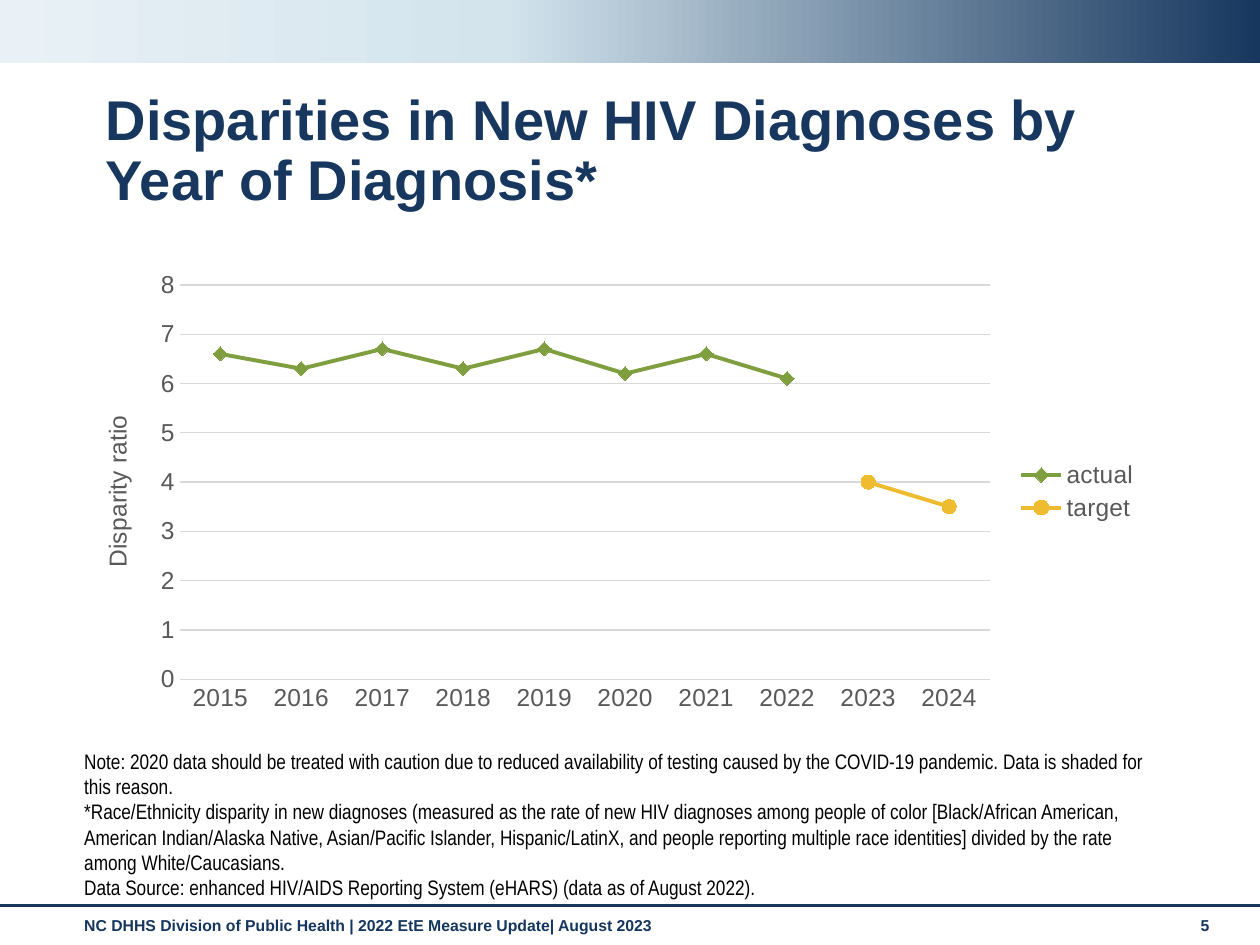
from lxml.etree import SubElement
from pptx import Presentation
from pptx.chart.data import CategoryChartData
from pptx.dml.color import RGBColor
from pptx.enum.chart import XL_CHART_TYPE as ChartType
from pptx.enum.chart import XL_LEGEND_POSITION as LegendPosition
from pptx.enum.chart import XL_MARKER_STYLE as Marker
from pptx.enum.chart import XL_TICK_MARK as TickMark
from pptx.enum.shapes import MSO_CONNECTOR as Connector
from pptx.enum.shapes import MSO_SHAPE as Shape
from pptx.enum.text import MSO_ANCHOR as Anchor
from pptx.oxml import parse_xml
from pptx.oxml.ns import nsdecls, qn
from pptx.util import Inches, Pt

WIDTH, HEIGHT = 10, 7.5
MARGIN, CONTENT_WIDTH = 0.57, 8.74
RULE_TOP, FOOTER_TOP = 7.19, 7.22
NAVY, FOOTER_NAVY, BLACK = "17375E", "15365E", "000000"
GRAY, GRID, GREEN, GOLD = "595959", "D9D9D9", "7F9E3F", "EFBB2F"
BAND_STOPS = [(0, "E9F1F6"), (40, "D3E4ED"), (100, NAVY)]
YEARS = [str(year) for year in range(2015, 2025)]
ACTUAL = [6.6, 6.3, 6.7, 6.3, 6.7, 6.2, 6.6, 6.1]
TARGET = [4, 3.5]
PLOT_SHARES = {"x": 0.1, "y": 0.05, "w": 0.75, "h": 0.86}
NOTES = [
    "Note: 2020 data should be treated with caution due to reduced availability of "
    "testing caused by the COVID-19 pandemic. Data is shaded for this reason.",
    "*Race/Ethnicity disparity in new diagnoses (measured as the rate of new HIV "
    "diagnoses among people of color [Black/African American, American Indian/Alaska "
    "Native, Asian/Pacific Islander, Hispanic/LatinX, and people reporting multiple "
    "race identities] divided by the rate among White/Caucasians.",
    "Data Source: enhanced HIV/AIDS Reporting System (eHARS) (data as of August 2022).",
]


def color(hex_value):
    return RGBColor.from_string(hex_value)


def style_font(font, size, hex_value, bold=False, name="Arial"):
    font.name, font.size, font.bold = name, Pt(size), bold
    font.color.rgb = color(hex_value)


def style_line(line, hex_value, width):
    line.color.rgb = color(hex_value)
    line.width = Pt(width)


def add_text(slide, box, paragraphs, size, hex_value, bold=True, name="Arial",
             anchor=Anchor.TOP, spacing=1.0):
    frame = slide.shapes.add_textbox(*map(Inches, box)).text_frame
    frame.word_wrap = True
    frame.vertical_anchor = anchor
    frame.text = "\n".join(paragraphs)
    for paragraph in frame.paragraphs:
        paragraph.line_spacing = spacing
        style_font(paragraph.font, size, hex_value, bold, name)


def add_band(slide, height, stops):
    band = slide.shapes.add_shape(Shape.RECTANGLE, 0, 0, Inches(WIDTH), Inches(height))
    band.shadow.inherit = False
    band.line.fill.background()
    band.fill.gradient()
    band.fill.gradient_angle = 0
    stop_list = band._element.spPr.find(qn("a:gradFill")).find(qn("a:gsLst"))
    stop_list.clear()
    for position, hex_value in stops:
        stop = SubElement(stop_list, qn("a:gs"), pos=str(position * 1000))
        SubElement(stop, qn("a:srgbClr"), val=hex_value)


def add_rule(slide, top):
    rule = slide.shapes.add_connector(
        Connector.STRAIGHT, 0, Inches(top), Inches(WIDTH), Inches(top))
    style_line(rule.line, NAVY, 1.75)
    SubElement(rule._element.spPr, qn("a:effectLst"))


def style_axes(chart):
    for axis in (chart.category_axis, chart.value_axis):
        axis.major_tick_mark = axis.minor_tick_mark = TickMark.NONE
        style_font(axis.tick_labels.font, 14, GRAY)
    style_line(chart.category_axis.format.line, GRID, 0.75)
    values = chart.value_axis
    values.minimum_scale, values.maximum_scale, values.major_unit = 0, 8, 1
    values.format.line.fill.background()
    style_line(values.major_gridlines.format.line, GRID, 0.75)
    title = values.axis_title.text_frame
    title.text = "Disparity ratio"
    style_font(title.paragraphs[0].font, 14, GRAY)


def style_series(series, hex_value, marker_style):
    series.smooth = False
    style_line(series.format.line, hex_value, 2.25)
    marker = series.marker
    marker.style, marker.size = marker_style, 8
    marker.format.fill.solid()
    marker.format.fill.fore_color.rgb = color(hex_value)
    marker.format.line.color.rgb = color(hex_value)


def place_plot(chart, shares):
    plot_area = chart._chartSpace.chart.plotArea
    for old_layout in plot_area.findall(qn("c:layout")):
        plot_area.remove(old_layout)
    modes = '<c:xMode val="edge"/><c:yMode val="edge"/>'
    sizes = "".join(f'<c:{key} val="{share}"/>' for key, share in shares.items())
    plot_area.insert(0, parse_xml(
        f'<c:layout {nsdecls("c")}><c:manualLayout><c:layoutTarget val="inner"/>'
        f'{modes}{sizes}</c:manualLayout></c:layout>'))


def add_disparity_chart(slide, box):
    data = CategoryChartData()
    data.categories = YEARS
    data.add_series("actual", ACTUAL + [None] * len(TARGET))
    data.add_series("target", [None] * len(ACTUAL) + TARGET)
    chart = slide.shapes.add_chart(
        ChartType.LINE_MARKERS, *map(Inches, box), data).chart
    style_font(chart.font, 14, BLACK)
    chart.has_title = False
    chart.has_legend = True
    chart.legend.position = LegendPosition.RIGHT
    chart.legend.include_in_layout = False
    style_font(chart.legend.font, 14, GRAY)
    chart.plots[0].vary_by_categories = False
    style_axes(chart)
    styles = [(GREEN, Marker.DIAMOND), (GOLD, Marker.CIRCLE)]
    for series, style in zip(chart.plots[0].series, styles):
        style_series(series, *style)
    place_plot(chart, PLOT_SHARES)


def main():
    presentation = Presentation()
    presentation.slide_width, presentation.slide_height = Inches(WIDTH), Inches(HEIGHT)
    slide = presentation.slides.add_slide(presentation.slide_layouts[6])
    add_text(slide, (MARGIN, FOOTER_TOP, CONTENT_WIDTH, 0.29),
             ["NC DHHS Division of Public Health | 2022 EtE Measure Update| August 2023"],
             9, FOOTER_NAVY)
    add_text(slide, (9.43, FOOTER_TOP, 0.44, 0.3), ["5"], 9, FOOTER_NAVY)
    add_band(slide, 0.5, BAND_STOPS)
    add_rule(slide, RULE_TOP)
    add_text(slide, (0.74, 0.68, 8.58, 0.6),
             ["Disparities in New HIV Diagnoses by Year of Diagnosis*"],
             32, NAVY, spacing=0.9)
    add_text(slide, (MARGIN, 6.83, CONTENT_WIDTH, RULE_TOP - 6.83), NOTES, 12, BLACK,
             bold=False, name="Arial Narrow", anchor=Anchor.BOTTOM)
    add_disparity_chart(slide, (MARGIN, 2.08, 8.57, 3.64))
    presentation.save("out.pptx")


if __name__ == "__main__":
    main()
